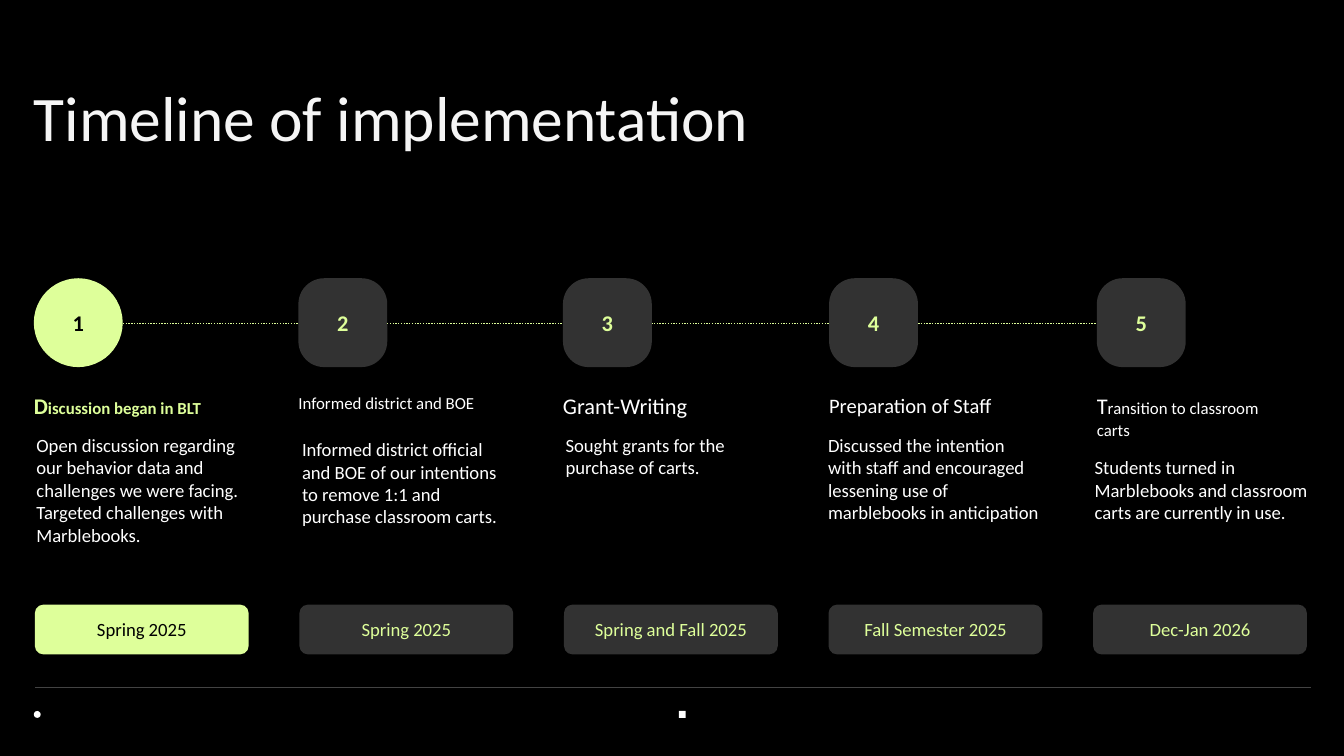
from dataclasses import dataclass

from lxml import etree
from pptx import Presentation
from pptx.dml.color import RGBColor
from pptx.enum.dml import MSO_LINE
from pptx.enum.shapes import MSO_CONNECTOR, MSO_SHAPE
from pptx.enum.text import MSO_ANCHOR, PP_ALIGN
from pptx.oxml.ns import qn
from pptx.util import Cm, Pt

ROUND_RECT = MSO_SHAPE.ROUNDED_RECTANGLE
OVAL = MSO_SHAPE.OVAL
SQUARE = MSO_SHAPE.RECTANGLE
STRAIGHT = MSO_CONNECTOR.STRAIGHT
DOTTED = MSO_LINE.ROUND_DOT
SOLID = MSO_LINE.SOLID
LEFT = PP_ALIGN.LEFT
CENTER = PP_ALIGN.CENTER
TOP = MSO_ANCHOR.TOP
MIDDLE = MSO_ANCHOR.MIDDLE

FONT = "Calibri"
COLORS = {
    "black": "000000",
    "white": "FFFFFF",
    "title": "F5F5F5",
    "lime": "DEFF9A",
    "dark": "323232",
    "rule": "434343",
}
PILL_LEFT = 0.66
PILL_PITCH = 5


@dataclass(frozen=True)
class Run:
    """A piece of text in one style."""
    text: str
    size: float
    color: str = "white"
    bold: bool = False


@dataclass(frozen=True)
class Step:
    """One stage of the timeline, with lengths in centimetres."""
    heading: tuple[Run, ...]
    body: str
    period: str
    node_left: float
    body_left: float
    body_top: float = 8.2
    body_width: float = 4.04
    active: bool = False


STEPS = (
    Step((Run("D", 12, "lime", True), Run("iscussion began in BLT", 9, "lime", True)),
         "Open discussion regarding our behavior data and challenges we were facing. "
         "Targeted challenges with Marblebooks.",
         "Spring 2025", 0.64, 0.69, active=True),
    Step((Run("Informed district and BOE", 9),),
         "Informed district official and BOE of our intentions to remove 1:1 and "
         "purchase classroom carts.",
         "Spring 2025", 5.64, 5.71, 8.28, 3.84),
    Step((Run("Grant-Writing", 12),),
         "Sought grants for the purchase of carts.",
         "Spring and Fall 2025", 10.64, 10.69),
    Step((Run("Preparation of Staff", 11),),
         "Discussed the intention with staff and encouraged lessening use of "
         "marblebooks in anticipation",
         "Fall Semester 2025", 15.67, 15.65),
    Step((Run("T", 12), Run("ransition to classroom carts", 9)),
         "Students turned in Marblebooks and classroom carts are currently in use.",
         "Dec-Jan 2026", 20.73, 20.69, 8.62),
)


def rgb(name: str) -> RGBColor:
    """Look up a named colour."""
    return RGBColor.from_string(COLORS[name])


def write(box, runs: tuple[Run, ...], align=LEFT, anchor=TOP, spacing: float = 1) -> None:
    """Fill the text frame of a box with one paragraph of runs."""
    frame = box.text_frame
    frame.word_wrap = True
    frame.vertical_anchor = anchor
    frame.margin_left = frame.margin_top = frame.margin_right = frame.margin_bottom = 0
    para = frame.paragraphs[0]
    para.alignment = align
    para.line_spacing = spacing
    for run in runs:
        span = para.add_run()
        span.text = run.text
        span.font.name = FONT
        span.font.size = Pt(run.size)
        span.font.bold = run.bold
        span.font.color.rgb = rgb(run.color)


def add_text(page, left: float, top: float, width: float, height: float,
             runs: tuple[Run, ...], spacing: float = 1) -> None:
    """Place a left-aligned text box."""
    box = page.shapes.add_textbox(Cm(left), Cm(top), Cm(width), Cm(height))
    write(box, runs, spacing=spacing)


def add_block(page, kind, left: float, top: float, width: float, height: float, fill: str):
    """Place a plain filled shape."""
    block = page.shapes.add_shape(kind, Cm(left), Cm(top), Cm(width), Cm(height))
    block.shadow.inherit = False
    block.fill.solid()
    block.fill.fore_color.rgb = rgb(fill)
    block.line.fill.background()
    return block


def add_rule(page, start: float, end: float, top: float, color: str, dash=SOLID) -> None:
    """Draw a horizontal line."""
    rule = page.shapes.add_connector(STRAIGHT, Cm(start), Cm(top), Cm(end), Cm(top))
    rule.line.color.rgb = rgb(color)
    rule.line.width = Pt(0.75)
    rule.line.dash_style = dash
    etree.SubElement(rule._element.spPr, qn("a:effectLst"))


def add_step(page, index: int, step: Step) -> None:
    """Draw the node, heading, body and period of one step."""
    fill, ink = ("lime", "black") if step.active else ("dark", "lime")
    node = add_block(page, ROUND_RECT, step.node_left, 5.26, 1.68, 1.68, fill)
    node.adjustments[0] = 0.5 if step.active else 0.29
    write(node, (Run(str(index + 1), 12, ink, True),), CENTER, MIDDLE)

    add_text(page, step.node_left, 7.42, 3.48, 0.41, step.heading)
    add_text(page, step.body_left, step.body_top, step.body_width, 2.26, (Run(step.body, 10),))

    pill = add_block(page, ROUND_RECT, PILL_LEFT + PILL_PITCH * index, 11.43, 4.04, 0.94, fill)
    pill.adjustments[0] = 0.17
    write(pill, (Run(step.period, 10, ink),), CENTER, MIDDLE)


def main() -> None:
    """Build the timeline slide."""
    deck = Presentation()
    deck.slide_width, deck.slide_height = Cm(25.4), Cm(14.29)
    page = deck.slides.add_slide(deck.slide_layouts[6])
    page.background.fill.solid()
    page.background.fill.fore_color.rgb = rgb("black")

    add_rule(page, 0.66, 24.77, 13, "rule")
    add_block(page, OVAL, 0.64, 13.44, 0.13, 0.13, "white")
    add_block(page, SQUARE, 12.83, 13.44, 0.13, 0.13, "white")

    add_text(page, 0.64, 1.7, 19, 1.5, (Run("Timeline of implementation", 34, "title"),), 0.85)
    add_rule(page, 0.66, 21.87, 6.12, "lime", DOTTED)
    for index, step in enumerate(STEPS):
        add_step(page, index, step)

    deck.save("out.pptx")


if __name__ == "__main__":
    main()
